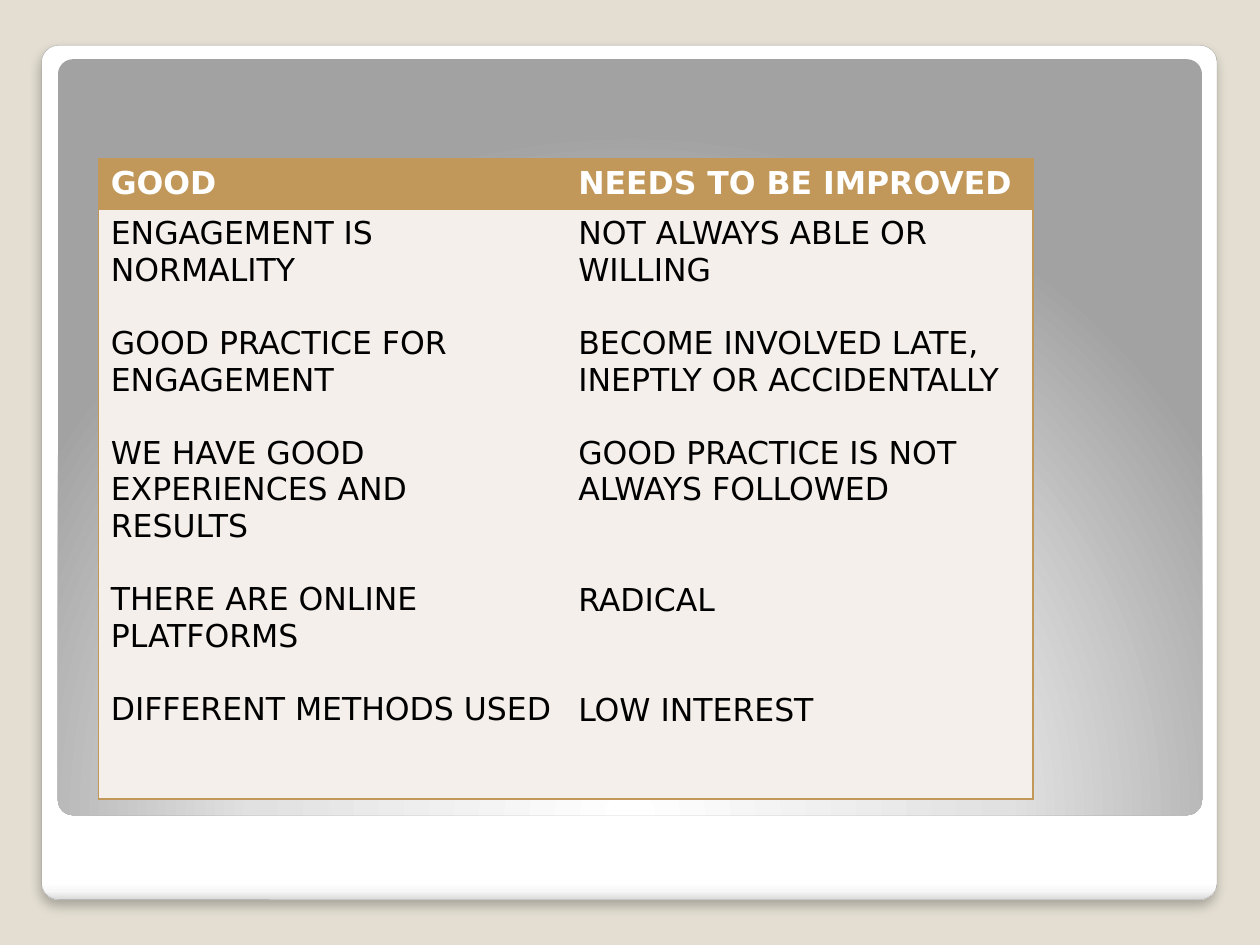
import lxml.etree
import pptx
import pptx.dml.color
import pptx.enum.shapes
import pptx.oxml
import pptx.oxml.ns
import pptx.util

Inches = pptx.util.Inches
Pt = pptx.util.Pt
FONT = "DejaVu Sans"
GOLD = "C19859"
CREAM = "F4EFEA"
LINE = 21
GOOD = [
    ("ENGAGEMENT IS NORMALITY", 0),
    ("GOOD PRACTICE FOR ENGAGEMENT", 1),
    ("WE HAVE GOOD EXPERIENCES AND RESULTS", 1),
    ("THERE ARE ONLINE PLATFORMS", 1),
    ("DIFFERENT METHODS USED", 1),
]
NEEDS = [
    ("NOT ALWAYS ABLE OR WILLING", 0),
    ("BECOME INVOLVED LATE, INEPTLY OR ACCIDENTALLY", 1),
    ("GOOD PRACTICE IS NOT ALWAYS FOLLOWED", 1),
    ("RADICAL", 2),
    ("LOW INTEREST", 2),
]


def color(code):
    """Turn a hex string into a colour."""
    return pptx.dml.color.RGBColor.from_string(code)


def node(parent, tag, **attrs):
    """Add a DrawingML child with the given attributes."""
    child = lxml.etree.SubElement(parent, pptx.oxml.ns.qn("a:" + tag))
    for key, value in attrs.items():
        child.set(key, str(value))
    return child


def blend(shape, stops):
    """Fill a shape with gradient stops and return the gradient."""
    shape.fill.background()
    blank = shape._element.spPr.find(pptx.oxml.ns.qn("a:noFill"))
    grad = pptx.oxml.parse_xml(
        "<a:gradFill %s/>" % pptx.oxml.ns.nsdecls("a"))
    grad.set("rotWithShape", "1")
    group = node(grad, "gsLst")
    for place, code in stops:
        stop = node(group, "gs", pos=place * 1000)
        node(stop, "srgbClr", val=code)
    blank.getparent().replace(blank, grad)
    return grad


def panel(slide, left, top, width, height, stops):
    """Add a rounded panel and return it with its gradient."""
    kind = pptx.enum.shapes.MSO_SHAPE.ROUNDED_RECTANGLE
    shape = slide.shapes.add_shape(
        kind, Inches(left), Inches(top), Inches(width), Inches(height))
    shape.adjustments[0] = 0.02
    shape.line.fill.background()
    shape.shadow.inherit = False
    return shape, blend(shape, stops)


def frame(slide, left, top, width, height):
    """Draw the white card and the grey panel within it."""
    card, grad = panel(
        slide, left, top, width, height,
        [(0, "FFFFFF"), (98, "FFFFFF"), (99, "F7F7F7"), (100, "DADADA")])
    node(grad, "lin", ang=90 * 60000, scaled=0)
    card.line.color.rgb = color("A4A4A4")
    card.line.width = Pt(0.16)
    effects = card._element.spPr.find(pptx.oxml.ns.qn("a:effectLst"))
    shade = node(effects, "outerShdw", blurRad=Pt(6), dist=Pt(4),
                 dir=90 * 60000, algn="tl", rotWithShape=0)
    node(node(shade, "srgbClr", val="000000"), "alpha", val=25000)
    grey, grad = panel(
        slide, left + 0.13, top + 0.11, width - 0.25, height - 0.78,
        [(0, "FFFFFF"), (55, "E1E1E1"), (100, "A2A2A2")])
    node(node(grad, "path", path="circle"), "fillToRect",
         l=50000, t=175000, r=50000, b=-75000)


def border(cell, sides):
    """Draw gold lines on the named sides and clear the others."""
    props = cell._tc.get_or_add_tcPr()
    for side in "LRTB":
        edge = node(props, "ln" + side, w=Pt(1))
        if side in sides:
            node(node(edge, "solidFill"), "srgbClr", val=GOLD)
        else:
            node(edge, "noFill")


def write(cell, items, ink, bold):
    """Write each item as a paragraph after its count of free lines."""
    text = cell.text_frame
    for index, (words, gap) in enumerate(items):
        para = text.add_paragraph() if index else text.paragraphs[0]
        if gap:
            para.space_before = Pt(gap * LINE)
        run = para.add_run()
        run.text = words
        run.font.name = FONT
        run.font.size = Pt(18)
        run.font.bold = bold
        run.font.color.rgb = color(ink)


def compare(slide, left, top, width, height):
    """Build the two-column table of good and weak points."""
    table = slide.shapes.add_table(
        2, 2, Inches(left), Inches(top), Inches(width), Inches(height)).table
    table.horz_banding = False
    head = 0.4
    table.rows[0].height = Inches(head)
    table.rows[1].height = Inches(height - head)
    parts = [("GOOD", GOOD, "LTB"), ("NEEDS TO BE IMPROVED", NEEDS, "RTB")]
    for col, (title, items, sides) in enumerate(parts):
        table.columns[col].width = Inches(width / 2)
        rows = [([(title, 0)], "FFFFFF", True, GOLD),
                (items, "000000", False, CREAM)]
        for row, (lines, ink, bold, fill) in enumerate(rows):
            cell = table.cell(row, col)
            border(cell, sides)
            cell.fill.solid()
            cell.fill.fore_color.rgb = color(fill)
            write(cell, lines, ink, bold)


def main():
    """Build and save the slide."""
    deck = pptx.Presentation()
    deck.slide_width = Inches(10)
    deck.slide_height = Inches(7.5)
    slide = deck.slides.add_slide(deck.slide_layouts[6])
    slide.background.fill.solid()
    slide.background.fill.fore_color.rgb = color("E3DED1")
    frame(slide, 0.33, 0.36, 9.33, 6.78)
    compare(slide, 0.78, 1.26, 7.42, 5.08)
    deck.save("out.pptx")


if __name__ == "__main__":
    main()
